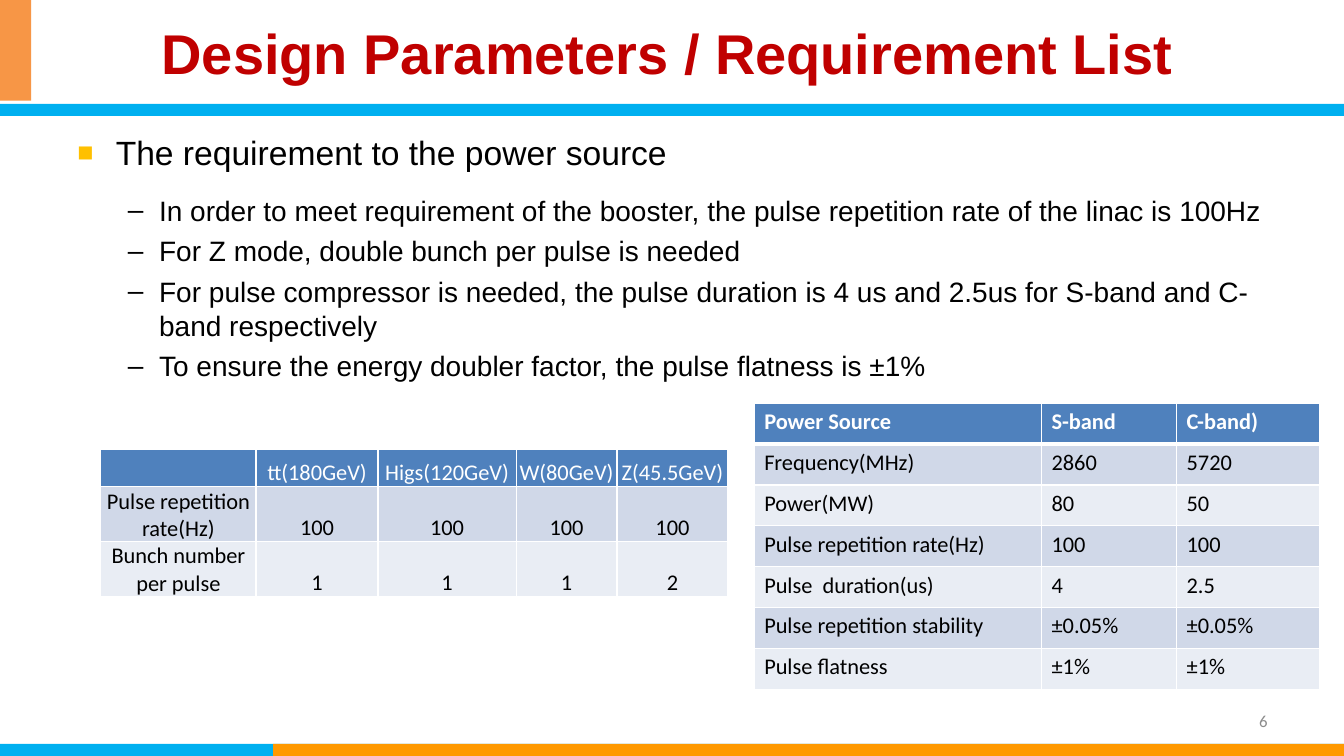
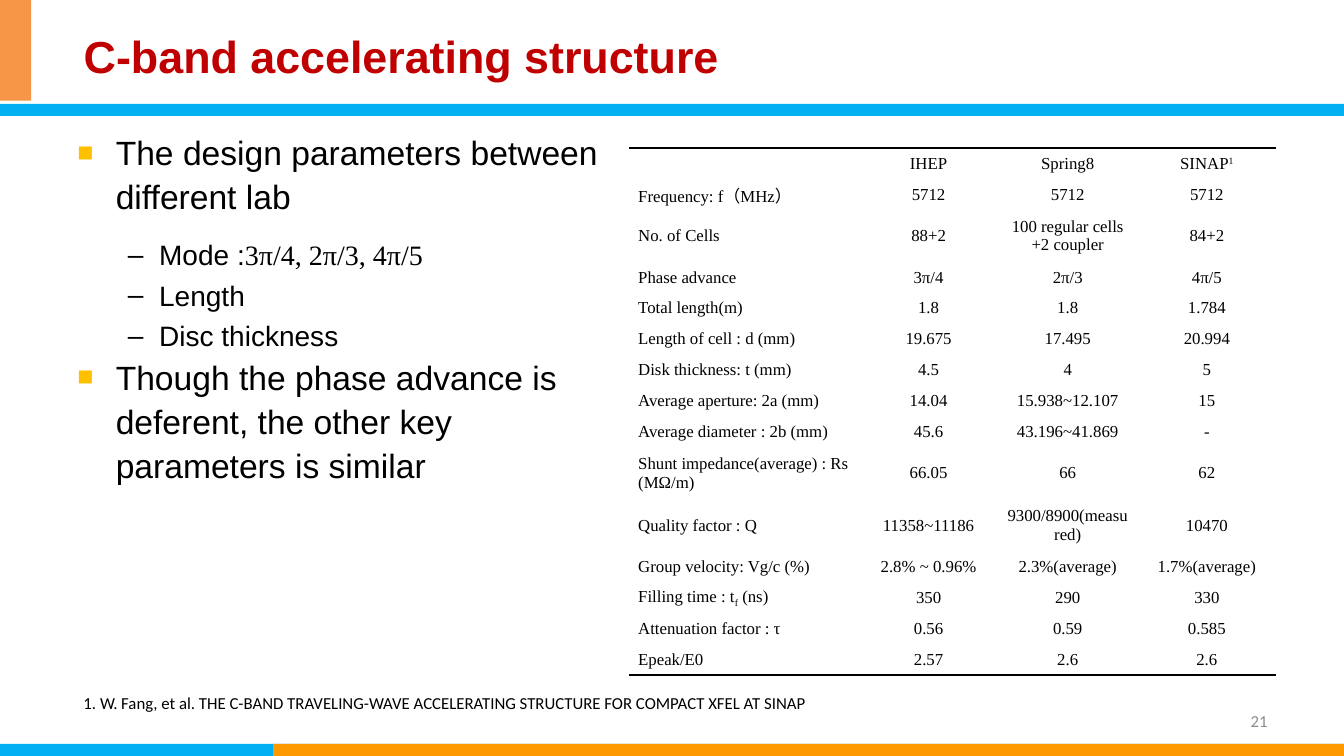
"""Build two slides on linac power source requirements and C-band structures."""
from lxml import etree
from pptx import Presentation
from pptx.dml.color import RGBColor
from pptx.enum import shapes, text
from pptx.oxml.ns import qn
from pptx.util import Inches, Pt

BLACK = RGBColor(0x00, 0x00, 0x00)
WHITE = RGBColor(0xFF, 0xFF, 0xFF)
GRAY = RGBColor(0x8C, 0x8C, 0x8C)
RED = RGBColor(0xC0, 0x00, 0x00)
SKY = RGBColor(0x00, 0xB0, 0xF0)
AMBER = RGBColor(0xFF, 0x99, 0x00)
GOLD = RGBColor(0xFF, 0xC0, 0x00)
CORAL = RGBColor(0xF7, 0x96, 0x46)
BLUE = RGBColor(0x4F, 0x81, 0xBD)
BAND_DARK = RGBColor(0xD0, 0xD8, 0xE8)
BAND_LIGHT = RGBColor(0xE9, 0xED, 0xF4)
LEFT, CENTER, RIGHT = text.PP_ALIGN.LEFT, text.PP_ALIGN.CENTER, text.PP_ALIGN.RIGHT
TOP, MIDDLE, BOTTOM = text.MSO_ANCHOR.TOP, text.MSO_ANCHOR.MIDDLE, text.MSO_ANCHOR.BOTTOM
PLAIN_TABLE = "{2D5ABB26-0587-4C30-8999-92F81FD0307C}"


def write(paragraph, words, size=12, color=BLACK, font="Calibri", bold=False, align=LEFT, baseline=0):
    paragraph.alignment = align
    if not words:
        etree.SubElement(paragraph._p, qn("a:endParaRPr"), sz=str(size * 100))
        return
    run = paragraph.add_run()
    run.text = words
    run.font.size, run.font.bold, run.font.name = Pt(size), bold, font
    run.font.color.rgb = color
    if baseline:
        run.font._element.set("baseline", str(baseline * 1000))


def draw_border(cell, side, color, width):
    properties = cell._tc.get_or_add_tcPr()
    line = etree.SubElement(properties, qn("a:ln" + side), w=str(Pt(width)))
    fill = etree.SubElement(line, qn("a:solidFill"))
    etree.SubElement(fill, qn("a:srgbClr"), val=str(color))


BANDS = [
    (0, 7.38, 13.33, 0.12, SKY),
    (2.71, 7.38, 10.63, 0.12, AMBER),
    (0, 1.03, 13.33, 0.12, SKY),
    (0, 0, 0.31, 1, CORAL),
]

mode_table = dict(
    at=(1, 4.46), columns=[1.54, 1.21, 1.37, 1, 1.1], heights=[0.37, 0.54, 0.54],
    size=16, font="Calibri", anchor=BOTTOM, margins=(0.01, 0.01, 0.01, 0),
    aligns=(CENTER, CENTER), banded=True, bold_header=False, header_rule=1,
    rows=[
        ["", "tt(180GeV)", "Higs(120GeV)", "W(80GeV)", "Z(45.5GeV)"],
        ["Pulse repetition rate(Hz)", "100", "100", "100", "100"],
        ["Bunch number per pulse", "1", "1", "1", "2"],
    ])

source_table = dict(
    at=(7.48, 4), columns=[2.85, 1.34, 1.42], heights=[2.84 / 7] * 7,
    size=16, font="Calibri", anchor=TOP, margins=(0.1, 0.05, 0.1, 0.05),
    aligns=(LEFT, LEFT), banded=True, bold_header=True, header_rule=3,
    rows=[
        ["Power Source", "S-band", "C-band)"],
        ["Frequency(MHz)", "2860", "5720"],
        ["Power(MW)", "80", "50"],
        ["Pulse repetition rate(Hz)", "100", "100"],
        ["Pulse  duration(us)", "4", "2.5"],
        ["Pulse repetition stability", "±0.05%", "±0.05%"],
        ["Pulse flatness", "±1%", "±1%"],
    ])

TALL_ROWS = (2, 9, 10)
structure_table = dict(
    at=(6.24, 1.47), columns=[2.28, 1.38, 1.38, 1.38],
    heights=[0.52 if row in TALL_ROWS else (5.23 - 3 * 0.52) / 12 for row in range(15)],
    size=12, font="Times New Roman", anchor=MIDDLE, margins=(0.09, 0.04, 0.09, 0.04),
    aligns=(LEFT, CENTER), banded=False, bold_header=False,
    rows=[
        ["", "IHEP", "Spring8", [("SINAP", 0), ("1", 30)]],
        ["Frequency: f（MHz）", "5712", "5712", "5712"],
        ["No. of Cells", "88+2", "100 regular cells +2 coupler", "84+2"],
        ["Phase advance", "3π/4", "2π/3", "4π/5"],
        ["Total length(m)", "1.8", "1.8", "1.784"],
        ["Length of cell : d (mm)", "19.675", "17.495", "20.994"],
        ["Disk thickness: t (mm)", "4.5", "4", "5"],
        ["Average aperture: 2a (mm)", "14.04", "15.938~12.107", "15"],
        ["Average diameter : 2b (mm)", "45.6", "43.196~41.869", "-"],
        ["Shunt impedance(average) : Rs (MΩ/m)", "66.05", "66", "62"],
        ["Quality factor : Q", "11358~11186", "9300/8900(measured)", "10470"],
        ["Group velocity: Vg/c (%)", "2.8% ~ 0.96%", "2.3%(average)", "1.7%(average)"],
        [[("Filling time : t", 0), ("f", -25), (" (ns)", 0)], "350", "290", "330"],
        ["Attenuation factor : τ", "0.56", "0.59", "0.585"],
        ["Epeak/E0", "2.57", "2.6", "2.6"],
    ])

SLIDES = [
    dict(
        title="Design Parameters / Requirement List", title_size=40, title_align=CENTER,
        title_spacing=0.9, number="6", body_width=12, footnote=None,
        tables=[mode_table, source_table],
        points=[
            (0, [("The requirement to the power source", "Arial")]),
            (1, [("In order to meet requirement of the booster, the pulse repetition rate "
                  "of the linac is 100Hz", "Arial")]),
            (1, [("For Z mode, double bunch per pulse is needed", "Arial")]),
            (1, [("For pulse compressor is needed, the pulse duration is 4 us and 2.5us "
                  "for S-band and C-band respectively", "Arial")]),
            (1, [("To ensure the energy doubler factor, the pulse flatness is ±1%", "Arial")]),
        ]),
    dict(
        title="C-band accelerating structure", title_size=32, title_align=LEFT,
        title_spacing=1.0, number="21", body_width=5.61,
        footnote="1. W. Fang, et al. THE C-BAND TRAVELING-WAVE ACCELERATING STRUCTURE "
                 "FOR COMPACT XFEL AT SINAP",
        tables=[structure_table],
        points=[
            (0, [("The design parameters between different lab", "Arial")]),
            (1, [("Mode :", "Arial"), ("3π/4, 2π/3, 4π/5", "Times New Roman")]),
            (1, [("Length", "Arial")]),
            (1, [("Disc thickness", "Arial")]),
            (0, [("Though the phase advance is deferent, the other key parameters "
                  "is similar", "Arial")]),
        ]),
]

deck = Presentation()
deck.slide_width, deck.slide_height = Inches(13.33), Inches(7.5)

for content in SLIDES:
    slide = deck.slides.add_slide(deck.slide_layouts[5])

    for left, top, width, height, color in BANDS:
        band = slide.shapes.add_shape(
            shapes.MSO_SHAPE.RECTANGLE, Inches(left), Inches(top), Inches(width), Inches(height))
        band.shadow.inherit = False
        band.fill.solid()
        band.fill.fore_color.rgb = color
        band.line.fill.background()

    title = slide.shapes.title
    title.left, title.top, title.width, title.height = map(Inches, (0.73, 0.16, 11.77, 0.79))
    title.text_frame.auto_size = text.MSO_AUTO_SIZE.NONE
    title.text_frame.vertical_anchor = MIDDLE
    heading = title.text_frame.paragraphs[0]
    heading.line_spacing = content["title_spacing"]
    write(heading, content["title"], size=content["title_size"], color=RED, font="Arial",
          bold=True, align=content["title_align"])

    body = slide.shapes.add_textbox(
        Inches(0.67), Inches(1.22), Inches(content["body_width"]), Inches(5.48)).text_frame
    body.word_wrap = True
    for index, (level, runs) in enumerate(content["points"]):
        point = body.add_paragraph() if index else body.paragraphs[0]
        point.level = level
        for words, font in runs:
            write(point, words, size=20 if level else 24, font=font)
        if level:
            point.space_before = Pt(5)
        else:
            point.line_spacing = 1.1
            point.space_after = Pt(10)
        margin, hanging = (0.81, 0.31) if level else (0.38, 0.38)
        properties = point._p.get_or_add_pPr()
        properties.set("marL", str(Inches(margin)))
        properties.set("indent", str(-Inches(hanging)))
        if not level:
            bullet_color = etree.SubElement(properties, qn("a:buClr"))
            etree.SubElement(bullet_color, qn("a:srgbClr"), val=str(GOLD))
            etree.SubElement(properties, qn("a:buSzPct"), val="80000")
        etree.SubElement(properties, qn("a:buFont"), typeface="Arial")
        etree.SubElement(properties, qn("a:buChar"), char="–" if level else "■")

    number = slide.shapes.add_textbox(
        Inches(9.56), Inches(6.95), Inches(3.11), Inches(0.4)).text_frame
    number.word_wrap = True
    number.vertical_anchor = MIDDLE
    write(number.paragraphs[0], content["number"], color=GRAY, align=RIGHT)

    for plan in content["tables"]:
        rows, columns, heights = plan["rows"], plan["columns"], plan["heights"]
        left, top = plan["at"]
        frame = slide.shapes.add_table(
            len(rows), len(columns), Inches(left), Inches(top),
            Inches(sum(columns)), Inches(sum(heights)))
        table = frame.table
        next(table._tbl.iter(qn("a:tableStyleId"))).text = PLAIN_TABLE
        for column, width in zip(table.columns, columns):
            column.width = Inches(width)
        for row, height in zip(table.rows, heights):
            row.height = Inches(height)

        for r, values in enumerate(rows):
            for c, value in enumerate(values):
                cell = table.cell(r, c)
                cell.vertical_anchor = plan["anchor"]
                (cell.margin_left, cell.margin_top,
                 cell.margin_right, cell.margin_bottom) = map(Inches, plan["margins"])
                header = plan["banded"] and r == 0
                for words, baseline in [(value, 0)] if isinstance(value, str) else value:
                    write(cell.text_frame.paragraphs[0], words, size=plan["size"],
                          font=plan["font"], color=WHITE if header else BLACK,
                          bold=header and plan["bold_header"],
                          align=plan["aligns"][c > 0], baseline=baseline)
                if plan["banded"]:
                    rule = plan["header_rule"]
                    for side in "LRTB":
                        below_header = (r, side) in ((0, "B"), (1, "T"))
                        draw_border(cell, side, WHITE, rule if below_header else 1)
                    cell.fill.solid()
                    cell.fill.fore_color.rgb = BLUE if header else BAND_DARK if r % 2 else BAND_LIGHT
                else:
                    if r == 0:
                        draw_border(cell, "T", BLACK, 1.5)
                    if r == len(rows) - 1:
                        draw_border(cell, "B", BLACK, 1.5)
                    cell.fill.background()

    if content["footnote"]:
        footnote = slide.shapes.add_textbox(
            Inches(0.73), Inches(6.82), Inches(7.67), Inches(0.3)).text_frame
        footnote.word_wrap = True
        write(footnote.paragraphs[0], content["footnote"])

deck.save("out.pptx")
